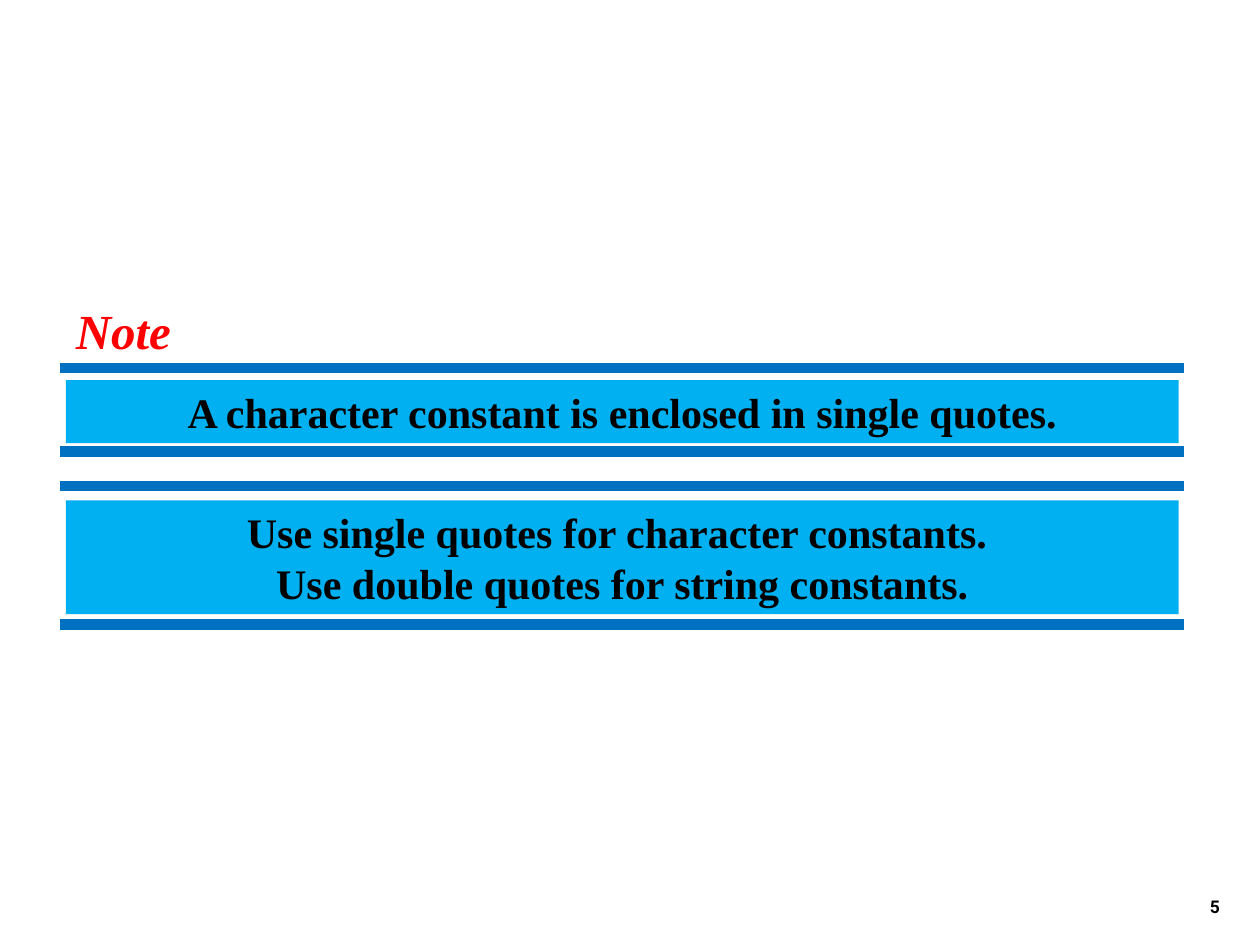
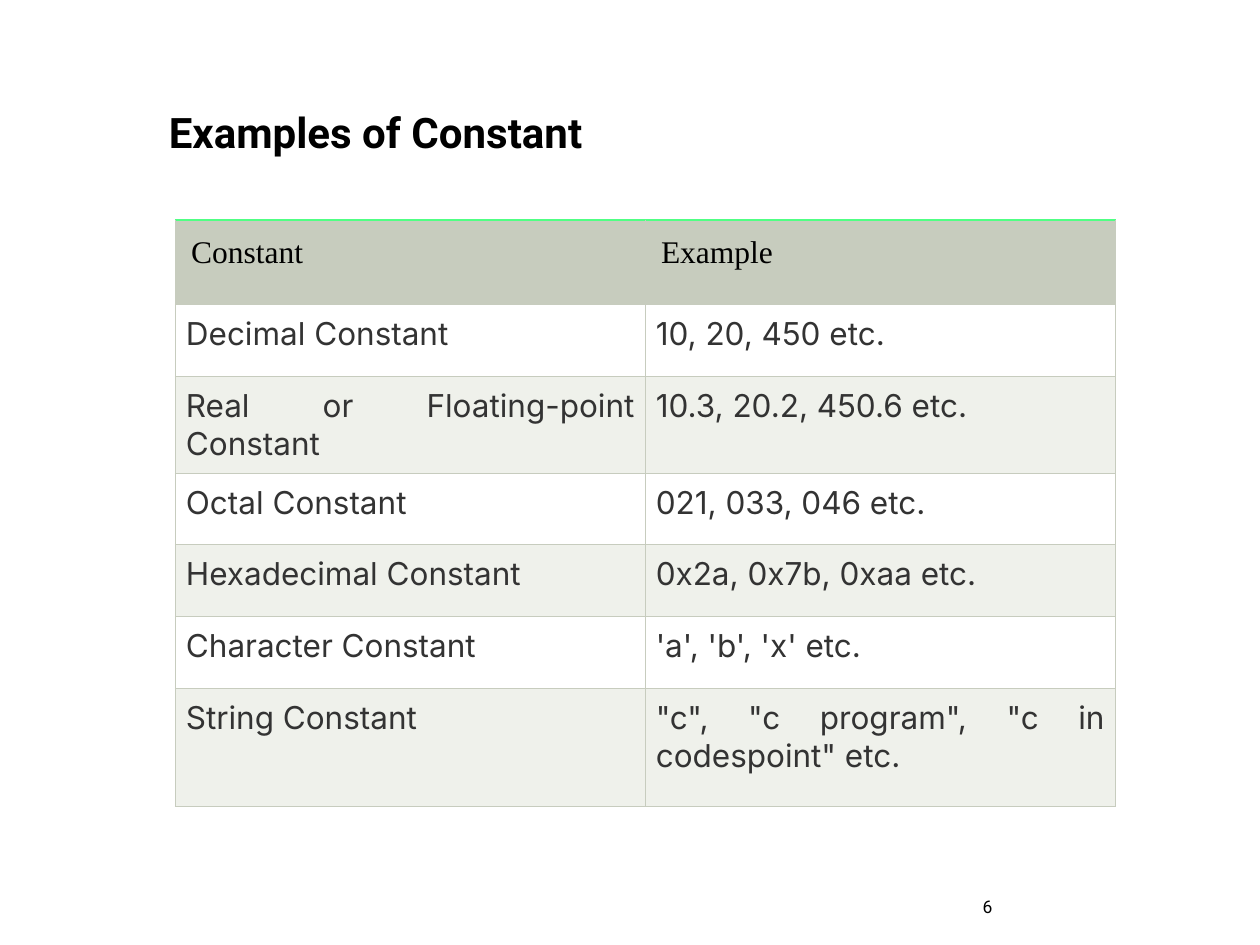
"""Builds two slides on constants: quoting notes and a table of examples."""
from lxml import etree
from pptx import Presentation
from pptx import util as u
from pptx.dml.color import RGBColor
from pptx.enum import shapes, text
from pptx.oxml import ns

COLOURS = {
    "ink": "000000", "note": "FF0000", "rule": "0070C0", "panel": "00B0F0",
    "header": "C7CCBE", "accent": "50FF84", "body": "333333",
    "plain": "FFFFFF", "band": "EFF1EB",
}
SERIF, SANS, TABLE_FONT = "Times New Roman", "Roboto", "Inter"
ALIGN = text.PP_ALIGN
TITLE_ONLY = 5

EXAMPLES = [
    ("Constant", "Example"),
    ("Decimal Constant", "10, 20, 450 etc."),
    ("Real or Floating-point Constant", "10.3, 20.2, 450.6 etc."),
    ("Octal Constant", "021, 033, 046 etc."),
    ("Hexadecimal Constant", "0x2a, 0x7b, 0xaa etc."),
    ("Character Constant", "'a', 'b', 'x' etc."),
    ("String Constant", '"c", "c program", "c in codespoint" etc.'),
]


def colour(name):
    return RGBColor.from_string(COLOURS[name])


def write(frame, content, font=SANS, size=24, ink="ink", bold=False,
          italic=False, align=ALIGN.LEFT, anchor=None, wrap=True):
    frame.word_wrap = wrap
    frame.auto_size = text.MSO_AUTO_SIZE.NONE
    if anchor is not None:
        frame.vertical_anchor = anchor
    paragraph = frame.paragraphs[0]
    paragraph.text = content
    paragraph.alignment = align
    for run in paragraph.runs:
        run.font.name = font
        run.font.size = u.Pt(size)
        run.font.bold = bold
        run.font.italic = italic
        run.font.color.rgb = colour(ink)


class Deck:
    def __init__(self):
        self.presentation = Presentation()
        self.presentation.slide_width = u.Pt(720)
        self.presentation.slide_height = u.Pt(540)
        self.slide = None

    def add_slide(self, number, **style):
        layout = self.presentation.slide_layouts[TITLE_ONLY]
        self.slide = self.presentation.slides.add_slide(layout)
        box = self.slide.shapes.add_textbox(*map(u.Pt, (554.4, 491.75, 149.75, 36)))
        write(box.text_frame, number, size=10,
              anchor=text.MSO_ANCHOR.BOTTOM, **style)

    def title(self, content, left, top, width, height, **style):
        shape = self.slide.shapes.title
        shape.left, shape.top = u.Pt(left), u.Pt(top)
        shape.width, shape.height = u.Pt(width), u.Pt(height)
        write(shape.text_frame, content, bold=True,
              anchor=text.MSO_ANCHOR.TOP, **style)

    def rule(self, top):
        line = self.slide.shapes.add_connector(
            shapes.MSO_CONNECTOR.STRAIGHT,
            u.Pt(34.5), u.Pt(top), u.Pt(676.5), u.Pt(top))
        line.line.color.rgb = colour("rule")
        line.line.width = u.Pt(6)
        etree.SubElement(line._element.spPr, ns.qn("a:effectLst"))

    def panel(self, content, top, height, rules):
        for rule_top in rules:
            self.rule(rule_top)
        shape = self.slide.shapes.add_shape(
            shapes.MSO_SHAPE.RECTANGLE,
            u.Pt(37.6), u.Pt(top), u.Pt(636), u.Pt(height))
        shape.shadow.inherit = False
        shape.fill.solid()
        shape.fill.fore_color.rgb = colour("panel")
        shape.line.fill.background()
        write(shape.text_frame, content, font=SERIF, bold=True,
              align=ALIGN.CENTER, anchor=text.MSO_ANCHOR.TOP)

    def border(self, cell, side, name):
        properties = cell._tc.get_or_add_tcPr()
        line = etree.SubElement(properties, ns.qn("a:ln" + side), w=str(u.Pt(0.75)))
        fill = etree.SubElement(line, ns.qn("a:solidFill"))
        etree.SubElement(fill, ns.qn("a:srgbClr"), val=COLOURS[name])

    def cell(self, cell, content, fill, inset, top_border="header", **style):
        cell.margin_left = cell.margin_right = u.Pt(inset)
        cell.margin_top = cell.margin_bottom = u.Pt(inset)
        for side in "LRTB":
            self.border(cell, side, top_border if side == "T" else "header")
        cell.fill.solid()
        cell.fill.fore_color.rgb = colour(fill)
        write_cell = cell.text_frame
        write(write_cell, content, size=18, **style)

    def table(self, rows, left, top, width, heights):
        table = self.slide.shapes.add_table(
            len(rows), len(rows[0]), u.Pt(left), u.Pt(top),
            u.Pt(width), u.Pt(sum(heights))).table
        for column in table.columns:
            column.width = u.Pt(width / len(rows[0]))
        for index, (row, height) in enumerate(zip(rows, heights)):
            table.rows[index].height = u.Pt(height)
            for position, content in enumerate(row):
                cell = table.cell(index, position)
                if index == 0:
                    self.cell(cell, content, "header", 9, "accent", font=SERIF)
                else:
                    self.cell(cell, content, "plain" if index % 2 else "band", 6,
                              font=TABLE_FONT, ink="body", align=ALIGN.JUSTIFY)


def main():
    deck = Deck()

    deck.add_slide("5", bold=True, align=ALIGN.RIGHT)
    deck.title("Note", 36, 168, 69, 41, font=SERIF, size=28, ink="note",
               italic=True, align=ALIGN.CENTER, wrap=False)
    deck.panel("A character constant is enclosed in single quotes.",
               217.25, 36, rules=(210.25, 258))
    deck.panel("Use single quotes for character constants. \n"
               "Use double quotes for string constants.",
               286, 65, rules=(277.75, 356.75))

    deck.add_slide("6")
    deck.title("Examples of Constant", 89.25, 57, 405.5, 36)
    deck.table(EXAMPLES, 100.25, 125.75, 537, [48.25] + [41] * 5 + [67.5])

    deck.presentation.save("out.pptx")


if __name__ == "__main__":
    main()
